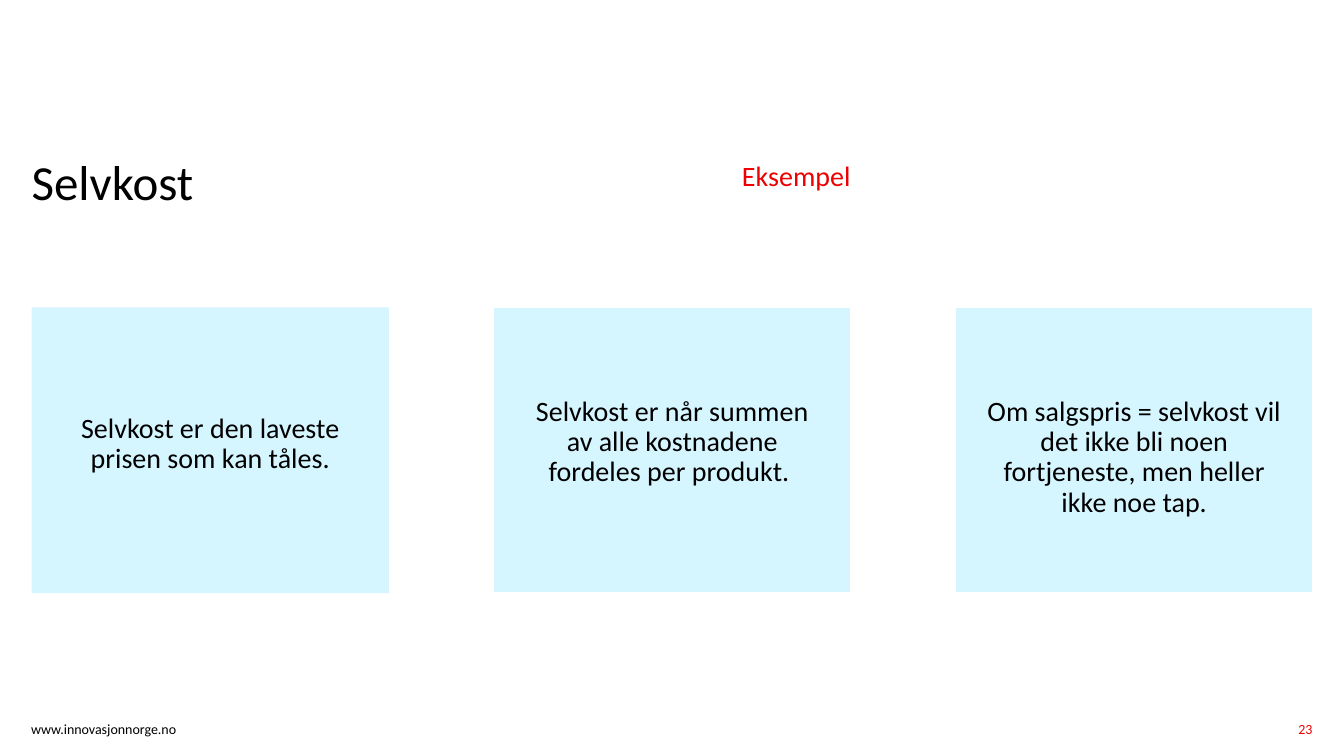
from dataclasses import dataclass

from pptx import Presentation
from pptx.dml.color import RGBColor
from pptx.enum.shapes import MSO_SHAPE
from pptx.enum.text import PP_ALIGN as Align
from pptx.slide import Slide
from pptx.util import Pt

BLACK = RGBColor(0x00, 0x00, 0x00)
RED = RGBColor(0xED, 0x00, 0x00)
WHITE = RGBColor(0xFF, 0xFF, 0xFF)
PALE_BLUE = RGBColor(0xD6, 0xF6, 0xFF)

CARD_LEFT, CARD_TOP, CARD_PITCH = 22.6, 219.6, 330
CARD_WIDTH, CARD_HEIGHT = 255.2, 204


@dataclass(frozen=True)
class Label:
    text: str
    left: float
    top: float
    width: float
    height: float
    size: float
    color: RGBColor = BLACK
    align: Align = Align.LEFT
    line_spacing: float = 0.9


@dataclass(frozen=True)
class Card:
    text: str
    text_top: float
    text_width: float
    text_height: float
    outlined: bool = True


LABELS = [
    Label("Selvkost", 22.6, 113, 407.5, 101.5, 35),
    Label("Eksempel", 530, 116, 407.5, 101.5, 20, RED),
    Label("www.innovasjonnorge.no", 22.3, 514.8, 205, 13.7, 10, line_spacing=1.0),
    Label("23", 859.7, 514.8, 77.8, 17.3, 10, RED, Align.RIGHT, 1.0),
]

CARDS = [
    Card("Selvkost er den laveste prisen som kan tåles.", 296, 231, 50.4, False),
    Card("Selvkost er når summen av alle kostnadene fordeles per produkt. ", 283.7, 216, 75),
    Card("Om salgspris = selvkost vil det ikke bli noen fortjeneste, men heller ikke noe tap.",
         283.7, 216, 75),
]


def add_label(s: Slide, label: Label) -> None:
    box = s.shapes.add_textbox(Pt(label.left), Pt(label.top), Pt(label.width), Pt(label.height))
    tf = box.text_frame
    tf.word_wrap = True
    tf.margin_left = tf.margin_right = tf.margin_top = tf.margin_bottom = 0
    p = tf.paragraphs[0]
    p.text = label.text
    p.alignment = label.align
    p.line_spacing = label.line_spacing
    p.font.name = "Calibri"
    p.font.size = Pt(label.size)
    p.font.color.rgb = label.color


def add_card(s: Slide, card: Card, left: float) -> None:
    sp = s.shapes.add_shape(MSO_SHAPE.RECTANGLE, Pt(left), Pt(CARD_TOP),
                            Pt(CARD_WIDTH), Pt(CARD_HEIGHT))
    sp.shadow.inherit = False
    sp.fill.solid()
    sp.fill.fore_color.rgb = PALE_BLUE
    if card.outlined:
        sp.line.color.rgb = WHITE
        sp.line.width = Pt(1)
    else:
        sp.line.fill.background()
    text_left = left + (CARD_WIDTH - card.text_width) / 2
    add_label(s, Label(card.text, text_left, card.text_top, card.text_width,
                       card.text_height, 20, align=Align.CENTER))


def main() -> None:
    prs = Presentation()
    prs.slide_width, prs.slide_height = Pt(960), Pt(540)
    s = prs.slides.add_slide(prs.slide_layouts[6])
    for label in LABELS:
        add_label(s, label)
    for i, card in enumerate(CARDS):
        add_card(s, card, CARD_LEFT + i * CARD_PITCH)
    prs.save("out.pptx")


if __name__ == "__main__":
    main()
